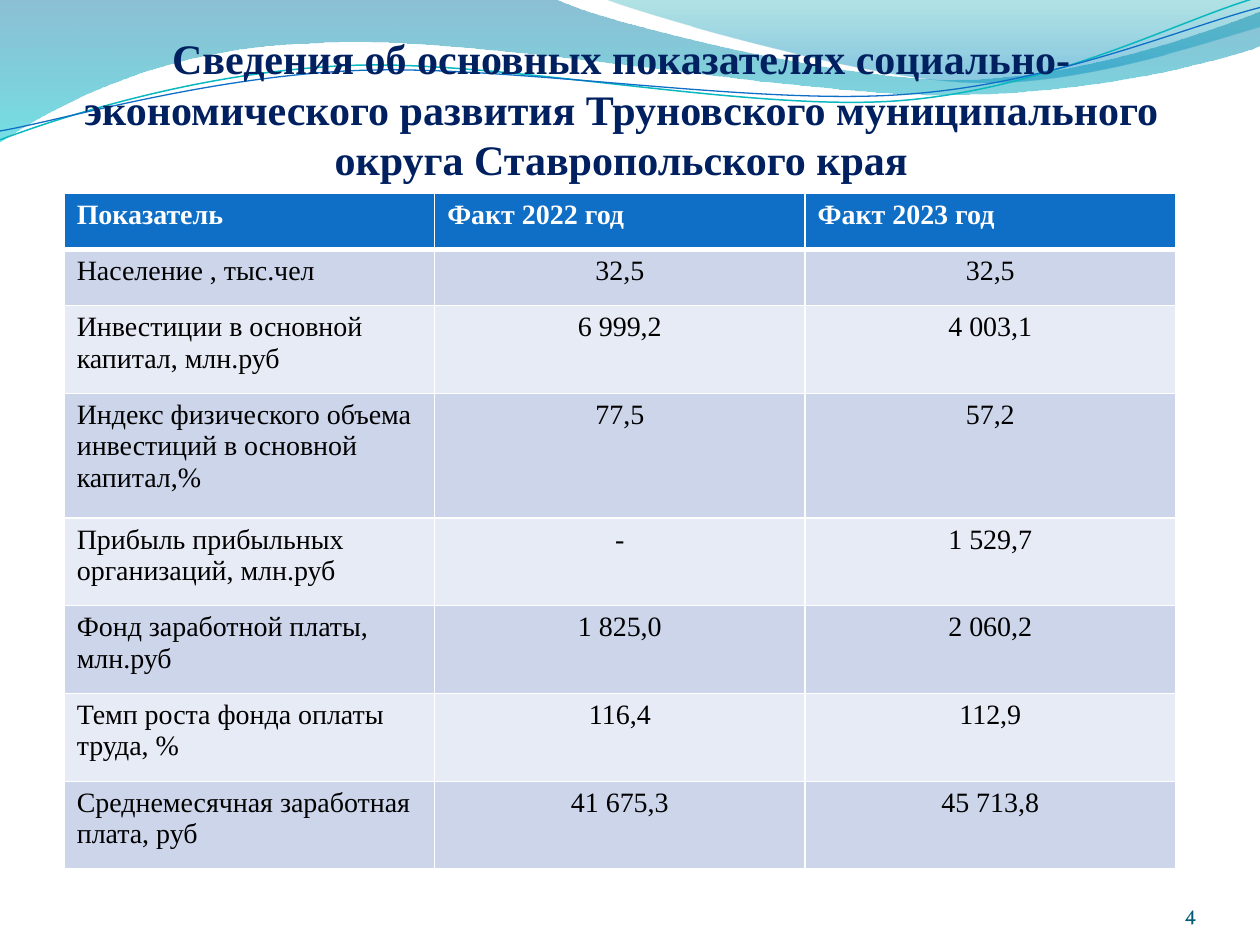
"""Build the slide of socio-economic indicators with a wave header."""
import math

import pptx
import pptx.util
import pptx.dml.color
import pptx.enum.text
import pptx.oxml
import pptx.oxml.ns
from pptx.util import Inches, Pt

FONT = "Times New Roman"
TITLE = ("Сведения об основных показателях социально-экономического развития "
         "Труновского муниципального округа Ставропольского края")
ROWS = [
    ("Показатель", "Факт 2022 год", "Факт 2023 год"),
    ("Население , тыс.чел", "32,5", "32,5"),
    ("Инвестиции в основной капитал, млн.руб", "6 999,2", "4 003,1"),
    ("Индекс физического объема инвестиций в основной капитал,%", "77,5", "57,2"),
    ("Прибыль прибыльных организаций, млн.руб", "-", "1 529,7"),
    ("Фонд заработной платы, млн.руб", "1 825,0", "2 060,2"),
    ("Темп роста фонда оплаты труда, %", "116,4", "112,9"),
    ("Среднемесячная заработная плата, руб", "41 675,3", "45 713,8"),
]
ROW_WEIGHTS = [0.45, 0.45, 0.7, 0.99, 0.7, 0.7, 0.7, 0.7]
TABLE_H, COL_W = 5.37, 2.94
HEADER, BANDS = "0F6FC6", ("E7EBF5", "CCD5EA")

WAVE_BANDS = [
    ([(0, 0), (4.4, -0.01), (4.76, 0.17, 6.64, 0.63, 7.58, 0.63),
      (8.53, 0.63, 9.58, 0.26, 10, 0.09), (10.01, 0.36),
      (9.83, 0.44, 8.7, 0.76, 7.46, 0.75), (6.22, 0.75, 3.82, 0.28, 2.57, 0.34),
      (1.29, 0.36, 0.46, 0.83, -0.01, 1.13), (0, 0)],
     [(0, "0074A1", 45), (1, "00C6CF", 55)]),
    ([(4.79, -0.01), (5.09, 0.11, 6.82, 0.62, 7.69, 0.65),
      (8.56, 0.69, 9.61, 0.32, 10, 0.21), (10, 0), (4.79, -0.01)],
     [(0, "00A1A9", 30), (0.8, "008BBF", 45)]),
]
WAVE_TILT = -2.7
WAVE_LINES = [
    ([(0, 1.11), (0.48, 0.93, 1.58, 0.57, 2.77, 0.52),
      (3.95, 0.47, 5.93, 0.89, 7.13, 0.8), (8.33, 0.71, 9.38, 0.15, 9.98, -0.02)],
     (4.99, 0.57), "0AB8BF", 0.85),
    ([(0, 1.04), (0.47, 0.96, 1.64, 0.61, 2.83, 0.56),
      (4.03, 0.51, 5.97, 0.84, 7.17, 0.75), (8.36, 0.67, 9.41, 0.21, 10, 0.06)],
     (5, 0.59), "0F6FC6", 0.75),
]


def rgb(color):
    return pptx.dml.color.RGBColor.from_string(color)


def level(step, center):
    angle = math.radians(-WAVE_TILT)
    cos, sin = math.cos(angle), math.sin(angle)
    turned = []
    for x, y in zip(step[::2], step[1::2]):
        dx, dy = x - center[0], y - center[1]
        turned += [center[0] + dx * cos - dy * sin, center[1] + dx * sin + dy * cos]
    return tuple(turned)


def add_outline(s, steps, close):
    """Draw steps of 2 numbers as lines and steps of 6 numbers as cubic curves."""
    ends = [(Inches(step[-2]), Inches(step[-1])) for step in steps]
    builder = s.shapes.build_freeform(*ends[0], scale=1.0)
    builder.add_line_segments(ends[1:], close=close)
    sp = builder.convert_to_shape()
    sp.shadow.inherit = False
    segments = list(sp._element.iter(pptx.oxml.ns.qn("a:lnTo")))
    for segment, step in zip(segments, steps[1:]):
        if len(step) == 6:
            points = "".join(
                f'<a:pt x="{Inches(x) - sp.left}" y="{Inches(y) - sp.top}"/>'
                for x, y in zip(step[::2], step[1::2]))
            curve = pptx.oxml.parse_xml(
                f'<a:cubicBezTo {pptx.oxml.ns.nsdecls("a")}>{points}</a:cubicBezTo>')
            segment.getparent().replace(segment, curve)
    return sp


def add_wave(s):
    for steps, stops in WAVE_BANDS:
        sp = add_outline(s, steps, True)
        sp.line.fill.background()
        sp.fill.gradient()
        sp.fill.gradient_angle = 270
        for stop, (position, color, _) in zip(sp.fill.gradient_stops, stops):
            stop.position = position
            stop.color.rgb = rgb(color)
        colors = sp._element.spPr.iter(pptx.oxml.ns.qn("a:srgbClr"))
        for clr, (_, _, opacity) in zip(colors, stops):
            clr.append(pptx.oxml.parse_xml(
                f'<a:alpha {pptx.oxml.ns.nsdecls("a")} val="{opacity * 1000}"/>'))
    for steps, center, color, width in WAVE_LINES:
        sp = add_outline(s, [level(step, center) for step in steps], False)
        sp.rotation = WAVE_TILT
        sp.fill.background()
        sp.line.color.rgb = rgb(color)
        sp.line.width = Pt(width)


def style(p, size, font, color, bold=False, align=None):
    p.font.size, p.font.name, p.font.bold = Pt(size), font, bold
    p.font.color.rgb = rgb(color)
    p.alignment = align


def add_text(s, box, text, top_inset, *look, **options):
    tf = s.shapes.add_textbox(*map(Inches, box)).text_frame
    tf.word_wrap = True
    tf.vertical_anchor = pptx.enum.text.MSO_ANCHOR.BOTTOM
    tf.margin_left = tf.margin_right = tf.margin_bottom = 0
    tf.margin_top = Inches(top_inset)
    p = tf.paragraphs[0]
    p.text = text
    style(p, *look, **options)


def set_borders(cell, row):
    widths = {"L": 1, "R": 1, "T": 3 if row == 1 else 1, "B": 3 if row == 0 else 1}
    for side, width in widths.items():
        cell._tc.get_or_add_tcPr().append(pptx.oxml.parse_xml(
            f'<a:ln{side} {pptx.oxml.ns.nsdecls("a")} w="{Pt(width)}"><a:solidFill>'
            f'<a:srgbClr val="FFFFFF"/></a:solidFill></a:ln{side}>'))


def add_indicators(s):
    cols = len(ROWS[0])
    table = s.shapes.add_table(len(ROWS), cols, Inches(0.51), Inches(1.53),
                               Inches(COL_W * cols), Inches(TABLE_H)).table
    for column in table.columns:
        column.width = Inches(COL_W)
    for i, (values, weight) in enumerate(zip(ROWS, ROW_WEIGHTS)):
        table.rows[i].height = Inches(TABLE_H * weight / sum(ROW_WEIGHTS))
        for j, value in enumerate(values):
            cell = table.cell(i, j)
            set_borders(cell, i)
            cell.fill.solid()
            cell.fill.fore_color.rgb = rgb(BANDS[i % 2] if i else HEADER)
            p = cell.text_frame.paragraphs[0]
            p.text = value
            style(p, 16, FONT, "000000" if i else "FFFFFF", bold=i == 0,
                  align=pptx.enum.text.PP_ALIGN.CENTER if i and j else None)


def main():
    prs = pptx.Presentation()
    prs.slide_width, prs.slide_height = Inches(10), Inches(7.5)
    s = prs.slides.add_slide(prs.slide_layouts[6])
    add_wave(s)
    add_text(s, (0.43, 0.21, 9, 1.25), TITLE, 0.05, 24, FONT, "002060",
             bold=True, align=pptx.enum.text.PP_ALIGN.CENTER)
    add_indicators(s)
    add_text(s, (8.67, 6.95, 0.83, 0.4), "4", 0, 12, "Vollkorn", "045D75",
             align=pptx.enum.text.PP_ALIGN.RIGHT)
    prs.save("out.pptx")


if __name__ == "__main__":
    main()
